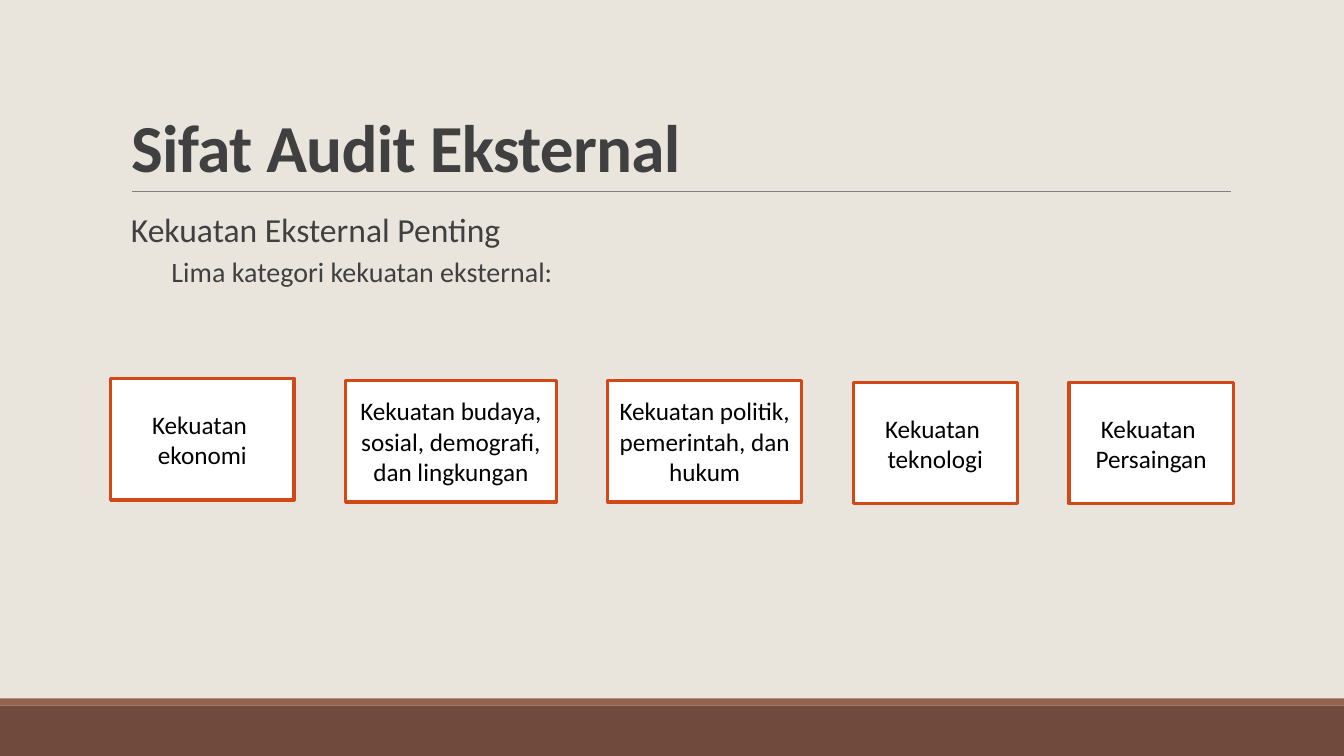
from lxml import etree
from pptx import Presentation
from pptx.dml.color import RGBColor
from pptx.enum.shapes import MSO_CONNECTOR, MSO_SHAPE
from pptx.enum.text import MSO_ANCHOR as ANCHOR, MSO_AUTO_SIZE, PP_ALIGN as ALIGN
from pptx.oxml.ns import qn
from pptx.util import Cm, Pt

COLORS = {
    "background": "E9E5DC", "band": "704A3D", "stripe": "956251",
    "rule": "808080", "text": "404040", "accent": "D34817",
    "box": "FFFFFF", "box_text": "000000",
}
FONT = "Calibri"
SLIDE_W, SLIDE_H = 33.87, 19.05

# width, drop below the top of the row, paragraphs
FORCES = [
    (4.62, 0, ["Kekuatan ", "ekonomi"]),
    (5.31, 0.05, ["Kekuatan budaya, sosial, demografi, dan lingkungan"]),
    (4.88, 0.05, ["Kekuatan politik, pemerintah, dan hukum"]),
    (4.14, 0.1, ["Kekuatan ", "teknologi"]),
    (4.14, 0.1, ["Kekuatan ", "Persaingan"]),
]


def rgb(name):
    return RGBColor.from_string(COLORS[name])


def place(sp, x, y, w, h):
    sp.left, sp.top, sp.width, sp.height = Cm(x), Cm(y), Cm(w), Cm(h)


def write(tf, text, size, color="text", bold=False, align=ALIGN.LEFT,
          level=0, before=0, after=0, spacing=1.0):
    """Fill the empty first paragraph, or add one, and return it."""
    p = tf.paragraphs[0] if not tf.text else tf.add_paragraph()
    p.alignment, p.level, p.line_spacing = align, level, spacing
    p.space_before, p.space_after = Pt(before), Pt(after)
    r = p.add_run()
    r.text = text
    r.font.name, r.font.size, r.font.bold = FONT, Pt(size), bold
    r.font.color.rgb = rgb(color)
    return p


def set_bullet(p, margin, indent, char=None):
    pPr = p._p.get_or_add_pPr()
    pPr.set("marL", str(Cm(margin)))
    pPr.set("indent", str(Cm(indent)))
    if char is None:
        etree.SubElement(pPr, qn("a:buNone"))
        return
    clr = etree.SubElement(pPr, qn("a:buClr"))
    etree.SubElement(clr, qn("a:srgbClr"), val=COLORS["accent"])
    etree.SubElement(pPr, qn("a:buChar"), char=char)


def add_rect(shapes, x, y, w, h, fill, line=None):
    sp = shapes.add_shape(MSO_SHAPE.RECTANGLE, Cm(x), Cm(y), Cm(w), Cm(h))
    sp.shadow.inherit = False
    sp.fill.solid()
    sp.fill.fore_color.rgb = rgb(fill)
    if line:
        sp.line.color.rgb = rgb(line)
        sp.line.width = Pt(2.25)
    else:
        sp.line.fill.background()
    return sp


def add_backdrop(slide, w, h):
    slide.background.fill.solid()
    slide.background.fill.fore_color.rgb = rgb("background")
    band_h, stripe_h = 1.27, 0.18
    add_rect(slide.shapes, 0, h - band_h, w, band_h, "band")
    add_rect(slide.shapes, 0, h - band_h - stripe_h, w, stripe_h, "stripe")


def add_title(slide, x, y, w, h):
    """Title with a thin rule along its lower edge."""
    title = slide.shapes.title
    place(title, x, y, w, h)
    tf = title.text_frame
    tf.auto_size = MSO_AUTO_SIZE.NONE
    tf.vertical_anchor = ANCHOR.BOTTOM
    p = write(tf, "Sifat Audit Eksternal", 48, bold=True, spacing=0.85)
    p.runs[0].font._element.set("spc", "-50")

    rule = slide.shapes.add_connector(MSO_CONNECTOR.STRAIGHT, Cm(x + 0.28), Cm(y + h),
                                      Cm(x + w + 0.02), Cm(y + h))
    rule.line.color.rgb = rgb("rule")
    rule.line.width = Pt(0.5)
    etree.SubElement(rule._element.spPr, qn("a:effectLst"))


def add_body(slide, x, y, w, h):
    body = slide.placeholders[1]
    place(body, x, y, w, h)
    tf = body.text_frame
    tf.auto_size = MSO_AUTO_SIZE.NONE
    tf.vertical_anchor = ANCHOR.TOP
    tf.margin_left = tf.margin_right = 0
    p = write(tf, "Kekuatan Eksternal Penting", 24, after=2)
    set_bullet(p, 0.25, -0.25, " ")
    p = write(tf, "Lima kategori kekuatan eksternal:", 20, level=1, before=2, after=4)
    set_bullet(p, 1.27, 0)


def add_forces(slide, x, y, h, gap):
    """Row of boxes, each starting one gap after the box before it."""
    group = slide.shapes.add_group_shape()
    for w, drop, lines in FORCES:
        sp = add_rect(group.shapes, x, y + drop, w, h, "box", "accent")
        tf = sp.text_frame
        tf.word_wrap = True
        tf.vertical_anchor = ANCHOR.MIDDLE
        for text in lines:
            write(tf, text, 18, "box_text", align=ALIGN.CENTER)
        x += w + gap


def main():
    prs = Presentation()
    prs.slide_width, prs.slide_height = Cm(SLIDE_W), Cm(SLIDE_H)
    slide = prs.slides.add_slide(prs.slide_layouts[1])
    add_backdrop(slide, SLIDE_W, SLIDE_H)
    add_title(slide, 3.05, 0.79, 27.94, 4.04)
    add_body(slide, 3.05, 5.13, 27.94, 11.18)
    add_forces(slide, 2.79, 9.53, 3.07, 1.3)
    prs.save("out.pptx")


if __name__ == "__main__":
    main()
